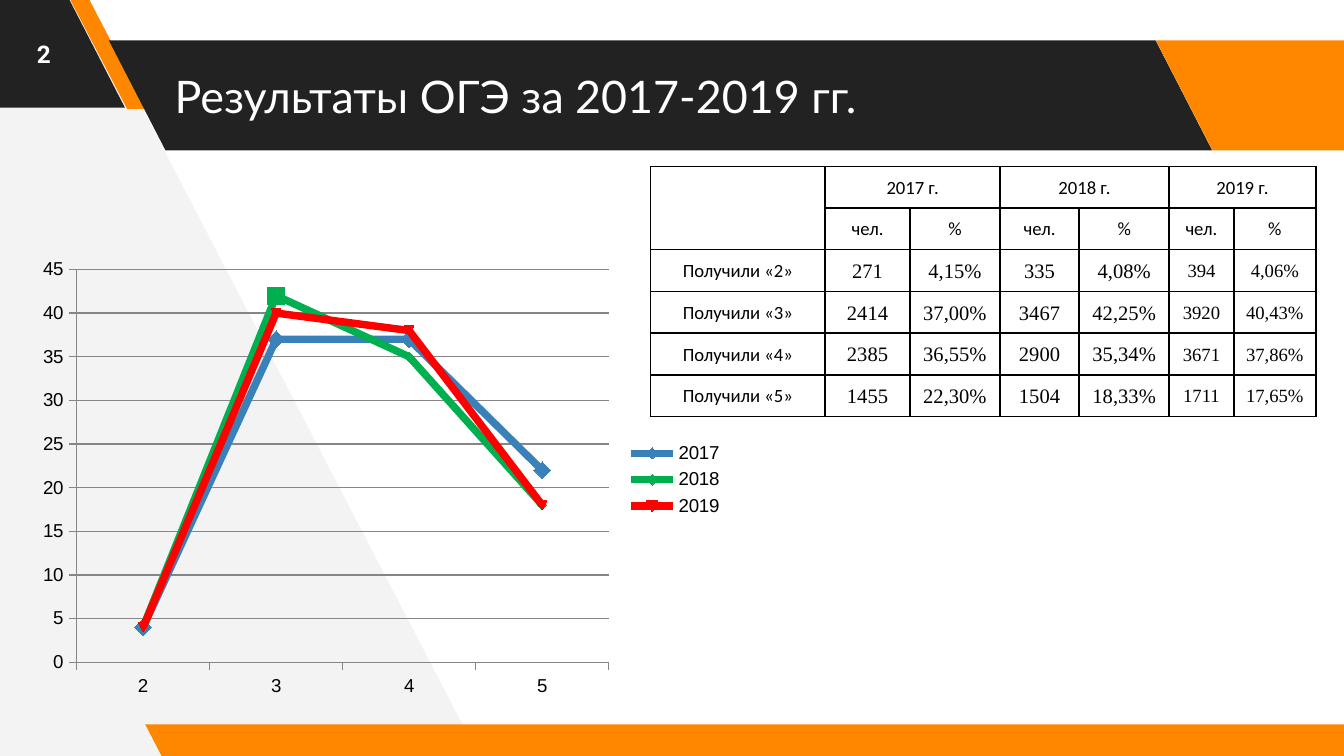
from pptx import Presentation
from pptx.chart.data import CategoryChartData
from pptx.dml.color import RGBColor
from pptx.enum.chart import XL_CHART_TYPE, XL_LEGEND_POSITION, XL_MARKER_STYLE, XL_TICK_MARK
from pptx.enum.shapes import MSO_SHAPE
from pptx.enum.text import MSO_ANCHOR, MSO_AUTO_SIZE, PP_ALIGN
from pptx.oxml import parse_xml
from pptx.oxml.ns import nsdecls
from pptx.util import Pt

BLACK, WHITE, DARK, ORANGE, PALE, GREY = "000000", "FFFFFF", "222222", "FF8700", "F3F3F3", "868686"


def color(value):
    return RGBColor.from_string(value)


def points(*values):
    return [Pt(value) for value in values]


class SlideBuilder:
    """Holds the slide and draws its elements in one style."""

    def __init__(self, slide):
        self.slide = slide

    def paint(self, shape, fill):
        shape.shadow.inherit = False
        shape.fill.solid()
        shape.fill.fore_color.rgb = color(fill)
        shape.line.fill.background()

    def outline(self, corners, fill):
        builder = self.slide.shapes.build_freeform(*points(*corners[0]), scale=1.0)
        builder.add_line_segments([points(*corner) for corner in corners[1:]], close=True)
        self.paint(builder.convert_to_shape(), fill)

    def slanted_bar(self, box, fill, slant=0.515):
        shape = self.slide.shapes.add_shape(MSO_SHAPE.PARALLELOGRAM, *points(*box))
        shape.adjustments[0] = slant
        shape.element.spPr.get_or_add_xfrm().set("flipH", "1")
        self.paint(shape, fill)

    def format_runs(self, paragraph, font_name, size, fill, alignment, bold=False):
        paragraph.alignment = alignment
        for run in paragraph.runs:
            run.font.name = font_name
            run.font.size = Pt(size)
            run.font.bold = bold
            run.font.color.rgb = color(fill)

    def fill_frame(self, shape, text, *style):
        frame = shape.text_frame
        frame.text = text
        frame.word_wrap = True
        frame.auto_size = MSO_AUTO_SIZE.NONE
        frame.vertical_anchor = MSO_ANCHOR.MIDDLE
        frame.margin_left = frame.margin_right = Pt(7.2)
        frame.margin_top = frame.margin_bottom = Pt(7.2)
        self.format_runs(frame.paragraphs[0], *style)

    def title(self, box, text):
        shape = self.slide.shapes.title
        shape.left, shape.top, shape.width, shape.height = points(*box)
        self.fill_frame(shape, text, "Lato", 24, WHITE, PP_ALIGN.LEFT)
        # Bring the title in front of the bars
        shape.element.getparent().append(shape.element)

    def page_number(self, box, text):
        shape = self.slide.shapes.add_textbox(*points(*box))
        self.fill_frame(shape, text, "Roboto", 13, WHITE, PP_ALIGN.CENTER, True)

    def line_chart(self, box, categories, series_list):
        data = CategoryChartData()
        data.categories = categories
        for name, values, _ in series_list:
            data.add_series(name, values)
        chart = self.slide.shapes.add_chart(XL_CHART_TYPE.LINE_MARKERS, *points(*box), data).chart
        chart.has_title = False
        chart.font.name = "Arial"
        chart.font.size = Pt(10)
        chart.font.color.rgb = color(BLACK)
        chart.has_legend = True
        chart.legend.position = XL_LEGEND_POSITION.RIGHT
        chart.legend.include_in_layout = False

        # Axes and gridlines
        value_axis = chart.value_axis
        value_axis.minimum_scale, value_axis.maximum_scale, value_axis.major_unit = 0, 45, 5
        value_axis.has_major_gridlines = True
        value_axis.major_gridlines.format.line.color.rgb = color(GREY)
        for axis in (chart.category_axis, value_axis):
            axis.major_tick_mark = XL_TICK_MARK.OUTSIDE
            axis.format.line.color.rgb = color(GREY)

        # Series lines and markers
        chart.plots[0].vary_by_categories = False
        for series, (_, _, fill) in zip(chart.plots[0].series, series_list):
            series.smooth = False
            self.series_line(series, fill)
            self.marker_fill(series.marker, fill)
        blue, green, _ = chart.plots[0].series
        peak = green.points[1]
        self.series_line(peak, series_list[1][2])
        for marker, style in ((blue.marker, XL_MARKER_STYLE.DIAMOND), (peak.marker, XL_MARKER_STYLE.SQUARE)):
            marker.style = style
            marker.size = 9
        self.marker_fill(peak.marker, series_list[1][2])

        # Fixed inner plot area
        plot_area = chart.element.chart.plotArea
        for layout in plot_area.findall("{*}layout"):
            plot_area.remove(layout)
        place = "".join(f'<c:{key} val="{value}"/>' for key, value in (
            ("layoutTarget", "inner"), ("xMode", "edge"), ("yMode", "edge"),
            ("x", 0.07), ("y", 0.04), ("w", 0.75), ("h", 0.86)))
        plot_area.insert(0, parse_xml(
            f'<c:layout {nsdecls("c")}><c:manualLayout>{place}</c:manualLayout></c:layout>'))

    def series_line(self, item, fill):
        item.format.line.color.rgb = color(fill)
        item.format.line.width = Pt(4)

    def marker_fill(self, marker, fill):
        marker.format.fill.solid()
        marker.format.fill.fore_color.rgb = color(fill)
        marker.format.line.color.rgb = color(fill)

    def table(self, box, widths, heights, rows, merges):
        table = self.slide.shapes.add_table(len(rows), len(widths), *points(*box)).table
        table.first_row = table.horz_banding = False
        for column, width in zip(table.columns, widths):
            column.width = Pt(width)
        for row, height in zip(table.rows, heights):
            row.height = Pt(height)
        for row_index, row in enumerate(rows):
            for column_index, text in enumerate(row):
                is_number = row_index > 1 and column_index > 0
                font_name = "Times New Roman" if is_number else "Calibri"
                size = 11 if is_number and column_index < 5 else 10
                self.table_cell(table.cell(row_index, column_index), text, font_name, size)
        for first, last in merges:
            table.cell(*first).merge(table.cell(*last))

    def table_cell(self, cell, text, font_name, size):
        cell.text_frame.text = text
        cell.vertical_anchor = MSO_ANCHOR.MIDDLE
        cell.margin_left = cell.margin_right = Pt(5)
        cell.margin_top = cell.margin_bottom = 0
        paragraph = cell.text_frame.paragraphs[0]
        paragraph.line_spacing = 1.07
        self.format_runs(paragraph, font_name, size, BLACK, PP_ALIGN.CENTER)
        properties = cell._tc.get_or_add_tcPr()
        for side in ("lnL", "lnR", "lnT", "lnB"):
            properties.append(parse_xml(
                f'<a:{side} {nsdecls("a")} w="{Pt(1)}"><a:solidFill>'
                f'<a:srgbClr val="{BLACK}"/></a:solidFill></a:{side}>'))
        cell.fill.background()


def main():
    presentation = Presentation()
    presentation.slide_width, presentation.slide_height = points(720, 405)
    builder = SlideBuilder(presentation.slides.add_slide(presentation.slide_layouts[5]))

    # Background wedge and bars
    builder.outline([(256.3, 404.6), (44.6, -2.9), (-4.3, -2.9), (-1.4, 407.5)], PALE)
    builder.slanted_bar((-71.3, -1.4, 138.2, 59), DARK)
    builder.slanted_bar((37.4, -0.7, 41, 59), ORANGE, 0.75)
    builder.slanted_bar((58.3, 21.6, 591.1, 59), DARK)
    builder.slanted_bar((619.2, 21.6, 138.2, 59), ORANGE)
    builder.slanted_bar((77.8, 388, 658.8, 18), ORANGE)

    # Heading
    builder.title((86.4, 21.6, 596.2, 59), "Результаты ОГЭ за 2017-2019 гг.")
    builder.page_number((0, 0, 46.8, 57.6), "2")

    # Share of each grade by year
    builder.line_chart((14.4, 134.6, 380.2, 244.8), ["2", "3", "4", "5"], [
        ("2017", (4, 37, 37, 22), "3A81BA"),
        ("2018", (4, 42, 35, 18), "00B050"),
        ("2019", (4, 40, 38, 18), "FF0000")])

    # Numbers and shares by grade
    rows = [
        ["", "2017 г.", "", "2018 г.", "", "2019 г.", ""],
        [""] + ["чел.", "%"] * 3,
        ["Получили «2»", "271", "4,15%", "335", "4,08%", "394", "4,06%"],
        ["Получили «3»", "2414", "37,00%", "3467", "42,25%", "3920", "40,43%"],
        ["Получили «4»", "2385", "36,55%", "2900", "35,34%", "3671", "37,86%"],
        ["Получили «5»", "1455", "22,30%", "1504", "18,33%", "1711", "17,65%"]]
    merges = [((0, 0), (1, 0))] + [((0, column), (0, column + 1)) for column in (1, 3, 5)]
    builder.table((348.5, 89.3, 357.1, 130.3), (93.6, 45.4, 48.2, 42.5, 48.2, 34.6, 44),
                  (22.3, 18.7, 22.7, 22.3, 22.3, 22.3), rows, merges)
    presentation.save("out.pptx")


if __name__ == "__main__":
    main()
